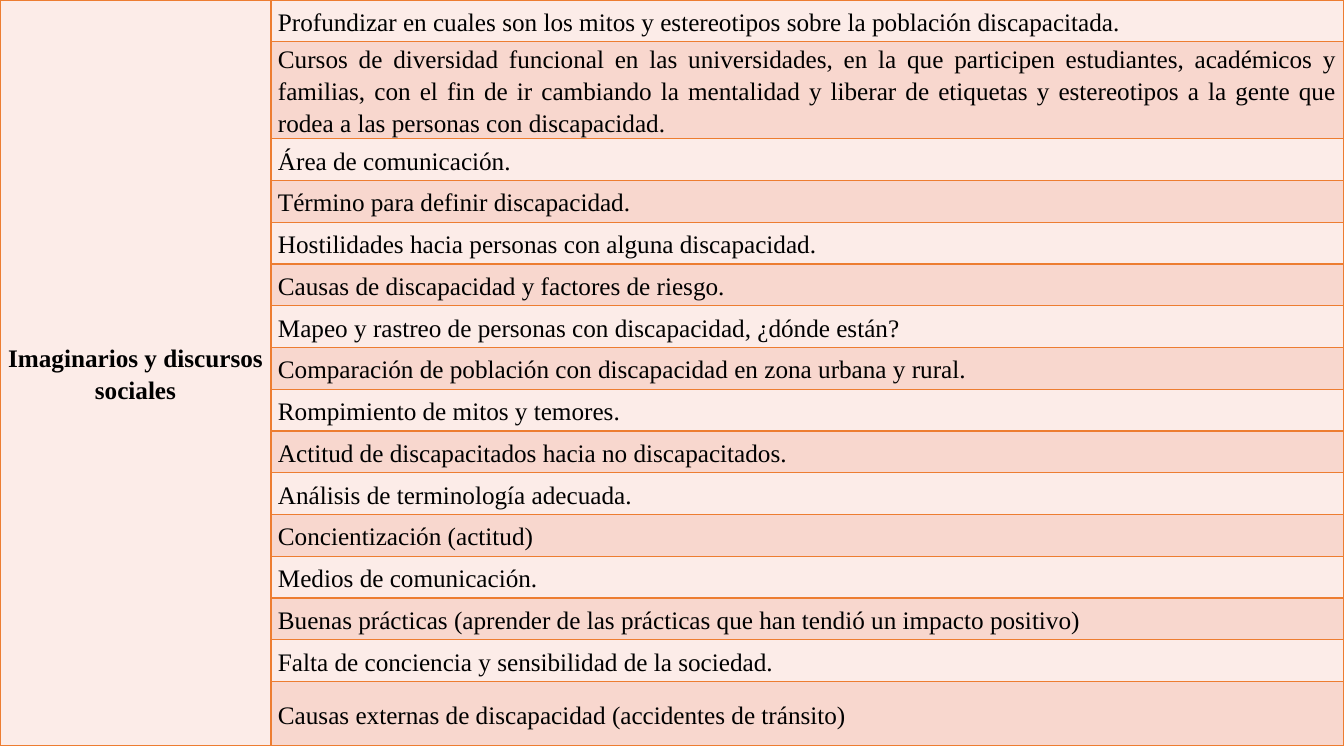
from lxml import etree
from pptx import Presentation
from pptx.dml.color import RGBColor
from pptx.enum.text import MSO_ANCHOR as ANCHOR, PP_ALIGN as ALIGN
from pptx.oxml.ns import qn
from pptx.util import Pt

SLIDE_W, SLIDE_H = 1344, 756
EMU_PER_PX = 12192000 / SLIDE_W

BLACK = RGBColor(0x00, 0x00, 0x00)
ORANGE = RGBColor(0xED, 0x7D, 0x31)
BANDS = (RGBColor(0xFC, 0xEC, 0xE8), RGBColor(0xF8, 0xD7, 0xCE))
FONT = "Times New Roman"

CATEGORY = "Imaginarios y discursos sociales"
TOPICS = [
    "Profundizar en cuales son los mitos y estereotipos sobre la población discapacitada.",
    "Cursos de diversidad funcional en las universidades, en la que participen estudiantes, "
    "académicos y familias, con el fin de ir cambiando la mentalidad y liberar de etiquetas y "
    "estereotipos a la gente que rodea a las personas con discapacidad.",
    "Área de comunicación.",
    "Término para definir discapacidad.",
    "Hostilidades hacia personas con alguna discapacidad.",
    "Causas de discapacidad y factores de riesgo.",
    "Mapeo y rastreo de personas con discapacidad, ¿dónde están?",
    "Comparación de población con discapacidad en zona urbana y rural.",
    "Rompimiento de mitos y temores.",
    "Actitud de discapacitados hacia no discapacitados.",
    "Análisis de terminología adecuada.",
    "Concientización (actitud)",
    "Medios de comunicación.",
    "Buenas prácticas (aprender de las prácticas que han tendió un impacto positivo)",
    "Falta de conciencia y sensibilidad de la sociedad.",
    "Causas externas de discapacidad (accidentes de tránsito)",
]
CATEGORY_W = 271
TALL_ROWS = {1: 97, len(TOPICS) - 1: 64}


def px(n):
    return round(n * EMU_PER_PX)


def style_cell(cell, fill):
    # Borders come before the fill in the cell properties
    tcPr = cell._tc.get_or_add_tcPr()
    for side in ("lnL", "lnR", "lnT", "lnB"):
        ln = etree.SubElement(tcPr, qn(f"a:{side}"), w=str(Pt(1)))
        solid = etree.SubElement(ln, qn("a:solidFill"))
        etree.SubElement(solid, qn("a:srgbClr"), val=str(ORANGE))
    cell.fill.solid()
    cell.fill.fore_color.rgb = fill
    cell.vertical_anchor = ANCHOR.MIDDLE
    cell.margin_left = cell.margin_right = px(7)
    cell.margin_top = cell.margin_bottom = 0


def write_cell(cell, text, align, bold=False):
    p = cell.text_frame.paragraphs[0]
    p.text = text
    p.alignment = align
    p.line_spacing = 1.15
    p.space_after = Pt(10)
    p.font.name = FONT
    p.font.size = Pt(18)
    p.font.bold = bold
    p.font.color.rgb = BLACK


def add_topic_table(slide, x, y, w, h):
    count = len(TOPICS)
    table = slide.shapes.add_table(count, 2, px(x), px(y), px(w), px(h)).table
    table.columns[0].width = px(CATEGORY_W)
    table.columns[1].width = px(w - CATEGORY_W)

    # Single-line rows share the height left by the tall ones
    row_h = (h - sum(TALL_ROWS.values())) / (count - len(TALL_ROWS))
    for i, topic in enumerate(TOPICS):
        table.rows[i].height = px(TALL_ROWS.get(i, row_h))
        style_cell(table.cell(i, 0), BANDS[0])
        style_cell(table.cell(i, 1), BANDS[i % 2])
        write_cell(table.cell(i, 1), topic, ALIGN.JUSTIFY)

    # Category spanning all rows
    table.cell(0, 0).merge(table.cell(count - 1, 0))
    write_cell(table.cell(0, 0), CATEGORY, ALIGN.CENTER, bold=True)


def main():
    prs = Presentation()
    prs.slide_width, prs.slide_height = px(SLIDE_W), px(SLIDE_H)
    slide = prs.slides.add_slide(prs.slide_layouts[6])
    add_topic_table(slide, 0, 0, SLIDE_W, 746)
    prs.save("out.pptx")


if __name__ == "__main__":
    main()
